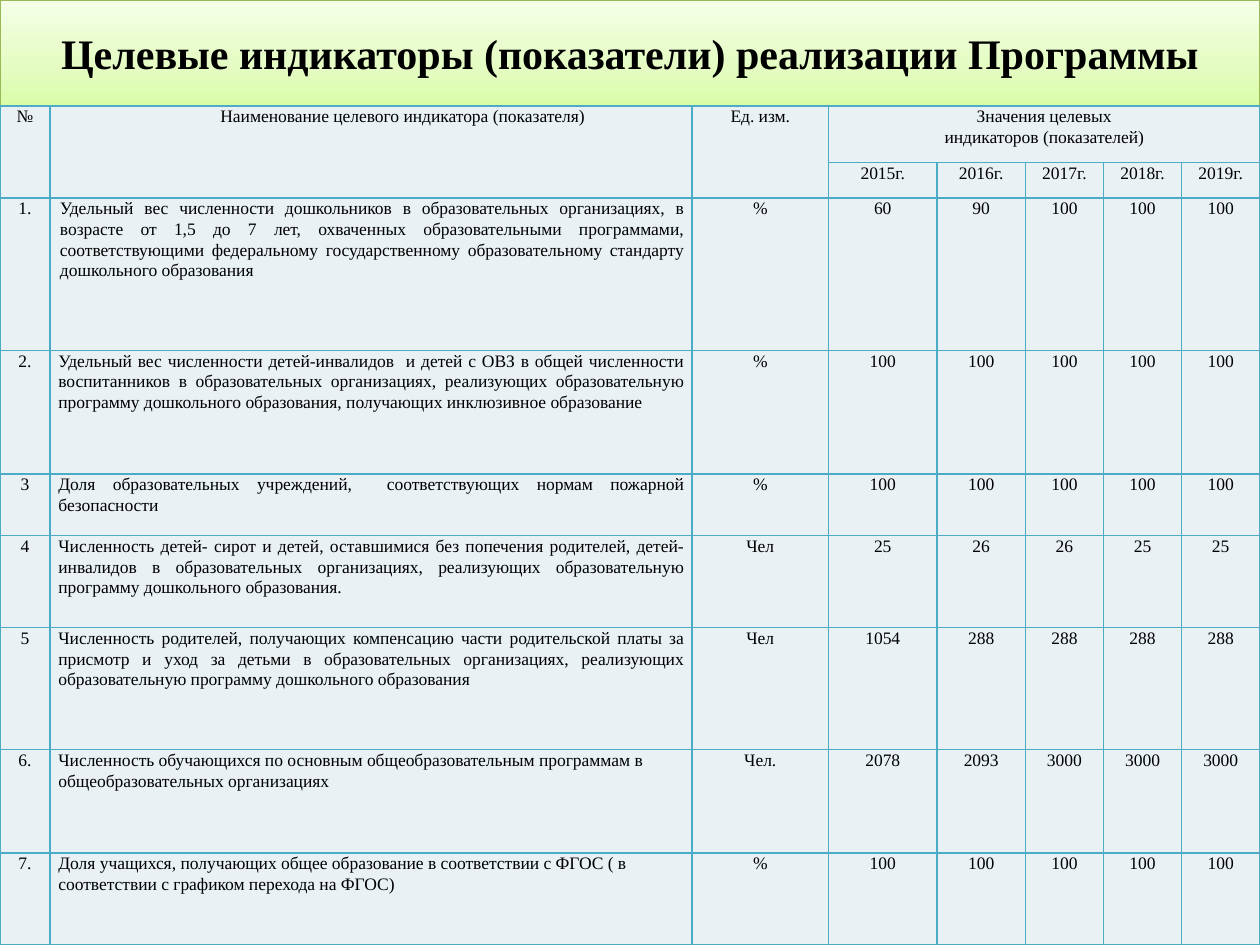
import pptx
import pptx.dml.color
import pptx.enum.shapes
import pptx.enum.text
import pptx.oxml
import pptx.oxml.ns
import pptx.util

Pt = pptx.util.Pt
ALIGN = pptx.enum.text.PP_ALIGN
FONT = "Times New Roman"
NS = pptx.oxml.ns.nsdecls("a")
HEX = {
    "text": "000000",
    "cell": "E9F1F5",
    "grid": "4BACC6",
    "edge": "98B955",
    "low": "DAFDA7",
    "mid": "E4FCC2",
    "high": "F5FFE7",
}


def color(name):
    return pptx.dml.color.RGBColor.from_string(HEX[name])


def write(frame, text, size, align, bold=False):
    for i, line in enumerate(text.split("\n")):
        para = frame.paragraphs[0] if i == 0 else frame.add_paragraph()
        para.alignment = align
        run = para.add_run()
        run.text = line
        run.font.name = FONT
        run.font.size = Pt(size)
        run.font.bold = bold
        run.font.color.rgb = color("text")


deck = pptx.Presentation()
deck.slide_width, deck.slide_height = Pt(720), Pt(540)
slide = deck.slides.add_slide(deck.slide_layouts[6])

# Title band with a three-stop gradient and a soft shadow
band = slide.shapes.add_shape(
    pptx.enum.shapes.MSO_SHAPE.RECTANGLE, 0, 0, Pt(720), Pt(60.5))
band.fill.gradient()
band.fill.gradient_angle = 90
first, last = band.fill.gradient_stops
first.color.rgb, first.position = color("low"), 0
last.color.rgb, last.position = color("high"), 1
stops = band.element.spPr.find(".//" + pptx.oxml.ns.qn("a:gsLst"))
stops.insert(1, pptx.oxml.parse_xml(
    f'<a:gs {NS} pos="35000"><a:srgbClr val="{HEX["mid"]}"/></a:gs>'))
band.line.color.rgb = color("edge")
band.line.width = Pt(0.75)
band.shadow.inherit = False
effects = band.element.spPr.find(pptx.oxml.ns.qn("a:effectLst"))
effects.append(pptx.oxml.parse_xml(
    f'<a:outerShdw {NS} blurRad="{Pt(3.1)}" dist="{Pt(1.6)}" dir="5400000" '
    'rotWithShape="0"><a:srgbClr val="000000"><a:alpha val="38000"/>'
    '</a:srgbClr></a:outerShdw>'))
band.text_frame.word_wrap = True
band.text_frame.vertical_anchor = pptx.enum.text.MSO_ANCHOR.MIDDLE
write(band.text_frame, "Целевые индикаторы (показатели) реализации Программы",
      24, ALIGN.CENTER, True)

# Table content
rows = [
    ["№", "Наименование целевого индикатора (показателя)", "Ед. изм.",
     "Значения целевых\nиндикаторов (показателей)", "", "", "", ""],
    ["", "", "", "2015г.", "2016г.", "2017г.", "2018г.", "2019г."],
    ["1.", "Удельный вес численности дошкольников в образовательных "
     "организациях, в возрасте от 1,5 до 7 лет, охваченных образовательными "
     "программами, соответствующими федеральному государственному "
     "образовательному стандарту дошкольного образования",
     "%", "60", "90", "100", "100", "100"],
    ["2.", "Удельный вес численности детей-инвалидов  и детей с ОВЗ в общей "
     "численности воспитанников в образовательных организациях, реализующих "
     "образовательную программу дошкольного образования, получающих "
     "инклюзивное образование",
     "%", "100", "100", "100", "100", "100"],
    ["3", "Доля образовательных учреждений,  соответствующих нормам пожарной "
     "безопасности",
     "%", "100", "100", "100", "100", "100"],
    ["4", "Численность детей- сирот и детей, оставшимися без попечения "
     "родителей, детей-инвалидов в образовательных организациях, реализующих "
     "образовательную программу дошкольного образования.",
     "Чел", "25", "26", "26", "25", "25"],
    ["5", "Численность родителей, получающих компенсацию части родительской "
     "платы за присмотр и уход за детьми в образовательных организациях, "
     "реализующих образовательную программу дошкольного образования",
     "Чел", "1054", "288", "288", "288", "288"],
    ["6.", "Численность обучающихся по основным общеобразовательным программам "
     "в общеобразовательных организациях",
     "Чел.", "2078", "2093", "3000", "3000", "3000"],
    ["7.", "Доля учащихся, получающих общее образование в соответствии с ФГОС "
     "( в соответствии с графиком перехода на ФГОС)",
     "%", "100", "100", "100", "100", "100"],
]
widths = [28.5, 367, 78, 62, 50.5, 44.67, 44.67, 44.66]
heights = [32.4, 20.2, 87.1, 70.6, 35.3, 52.6, 69.8, 59, 52.5]

# Table grid and merged headings
table = slide.shapes.add_table(
    len(rows), len(widths), 0, Pt(60.5), Pt(720), Pt(479.5)).table
for col, width in zip(table.columns, widths):
    col.width = Pt(width)
for row, height in zip(table.rows, heights):
    row.height = Pt(height)
for c in range(3):
    table.cell(0, c).merge(table.cell(1, c))
table.cell(0, 3).merge(table.cell(0, 7))

# Cells: fill, borders and text
for r, row in enumerate(rows):
    for c, text in enumerate(row):
        cell = table.cell(r, c)
        cell.margin_left = cell.margin_right = Pt(4.9)
        cell.margin_top = cell.margin_bottom = 0
        cell.fill.solid()
        cell.fill.fore_color.rgb = color("cell")
        props = cell._tc.get_or_add_tcPr()
        for i, side in enumerate("LRTB"):
            props.insert(i, pptx.oxml.parse_xml(
                f'<a:ln{side} {NS} w="{Pt(1)}"><a:solidFill>'
                f'<a:srgbClr val="{HEX["grid"]}"/></a:solidFill></a:ln{side}>'))
        align = ALIGN.CENTER
        if c == 1 and r > 1:
            align = ALIGN.JUSTIFY if r < 7 else ALIGN.LEFT
        if text:
            write(cell.text_frame, text, 10, align)
        for para in cell.text_frame.paragraphs:
            para.line_spacing = 1.07
            para.font.size = Pt(10)

# Indents of the name heading and the first indicator
for r, indent in ((0, 36), (2, 0.9)):
    para = table.cell(r, 1).text_frame.paragraphs[0]
    para._p.get_or_add_pPr().set("marL", str(Pt(indent)))

deck.save("out.pptx")
